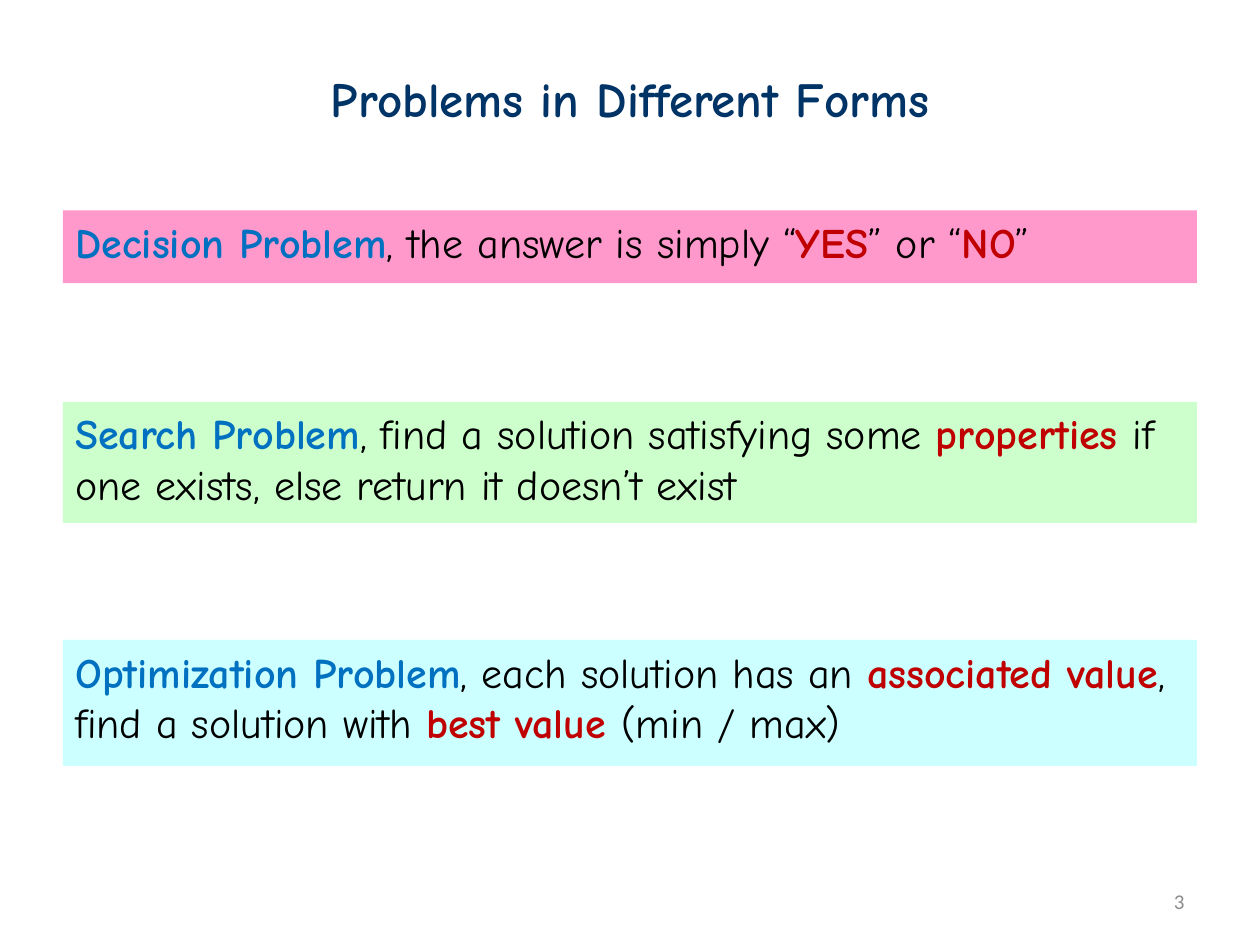
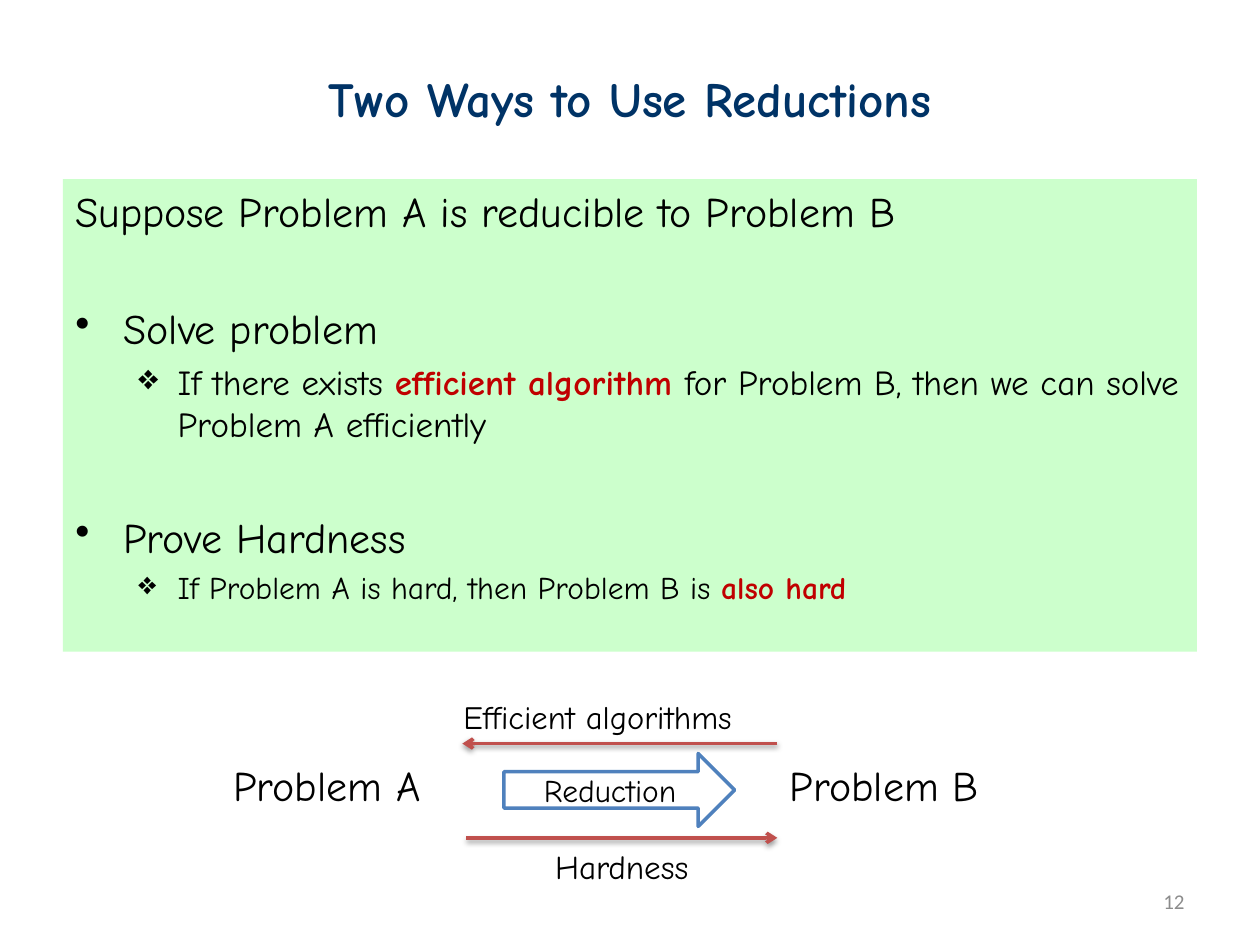
"""Build two lecture slides on problem forms and on uses of reductions."""
from lxml.etree import SubElement
from pptx import Presentation
from pptx.dml.color import RGBColor
from pptx.enum.shapes import MSO_CONNECTOR, MSO_SHAPE
from pptx.enum.text import MSO_ANCHOR, PP_ALIGN
from pptx.oxml import parse_xml
from pptx.oxml.ns import nsdecls, qn
from pptx.util import Cm, Pt

HUES = {
    "navy": "003366", "blue": "0070C0", "red": "C00000", "black": "000000",
    "gray": "8C8C8C", "pink": "FF99CC", "green": "CCFFCC", "cyan": "CCFFFF",
    "white": "FFFFFF", "edge": "4F81BD", "line": "C0504D",
}
LEFT, WIDE = 1.27, 22.86
FONT = "Comic Neue"
MID = {"anchor": MSO_ANCHOR.MIDDLE, "lead": 0}
MARKS = {"•": (0.97, 0.97), "❖": (2.06, 0.79)}
SHADE = (
    f'<a:effectLst {nsdecls("a")}><a:outerShdw blurRad="{Pt(3.1)}" dist="{Pt(1.6)}" '
    'dir="5400000" rotWithShape="0"><a:srgbClr val="000000"><a:alpha val="38000"/>'
    "</a:srgbClr></a:outerShdw></a:effectLst>"
)


def tint(name):
    return RGBColor.from_string(HUES[name])


def write(slide, spot, lines, fill=None, form=None, face=FONT,
          anchor=MSO_ANCHOR.TOP, align=PP_ALIGN.LEFT, lead=0.2):
    place = [Cm(n) for n in spot]
    if form is None:
        shape = slide.shapes.add_textbox(*place)
    else:
        shape = slide.shapes.add_shape(form, *place)
        shape.shadow.inherit = False
        shape.fill.solid()
        shape.fill.fore_color.rgb = tint(fill)
        shape.line.fill.background()
    frame = shape.text_frame
    frame.word_wrap = True
    frame.vertical_anchor = anchor
    for i, (size, mark, gap, parts) in enumerate(lines):
        para = frame.add_paragraph() if i else frame.paragraphs[0]
        look = {"alignment": align, "space_before": Pt(gap or size * lead)}
        for key, value in look.items():
            setattr(para, key, value)
        if mark:
            props = para._p.get_or_add_pPr()
            left, hang = MARKS[mark]
            props.set("marL", str(Cm(left)))
            props.set("indent", str(-Cm(hang)))
            SubElement(props, qn("a:buChar")).set("char", mark)
        for text, hue in parts:
            run = para.add_run()
            run.text = text
            look = {"name": face, "size": Pt(size), "bold": hue in ("navy", "blue", "red")}
            for key, value in look.items():
                setattr(run.font, key, value)
            run.font.color.rgb = tint(hue)
    return shape


deck = Presentation()
deck.slide_width, deck.slide_height = Cm(25.4), Cm(19.05)
slides = []
for title, page in (("Problems in Different Forms", "3"), ("Two Ways to Use Reductions", "12")):
    slide = deck.slides.add_slide(deck.slide_layouts[6])
    write(slide, (LEFT, 0.76, WIDE, 2.41), [(28, None, 0, [(title, "navy")])],
          align=PP_ALIGN.CENTER, **MID)
    write(slide, (18.21, 17.65, 5.92, 1.02), [(12, None, 0, [(page, "gray")])],
          face="Calibri", align=PP_ALIGN.RIGHT, **MID)
    slides.append(slide)
forms, ways = slides

bands = [
    (4.24, 1.47, "pink", [
        ("Decision Problem", "blue"), (", the answer is simply “", "black"),
        ("YES", "red"), ("” or “", "black"), ("NO", "red"), ("”", "black")]),
    (8.1, 2.44, "green", [
        ("Search Problem", "blue"), (", find a solution satisfying some ", "black"),
        ("properties ", "red"), ("if one exists, else return it doesn’t exist", "black")]),
    (12.9, 2.54, "cyan", [
        ("Optimization Problem", "blue"), (", each solution has an ", "black"),
        ("associated value", "red"), (", find a solution with ", "black"),
        ("best value ", "red"), ("(min / max)", "black")]),
]
for top, high, fill, parts in bands:
    write(forms, (LEFT, top, WIDE, high), [(24, None, 0, parts)], fill, MSO_SHAPE.RECTANGLE)

points = [
    (24, None, 0, [("Suppose Problem A is reducible to Problem B", "black")]),
    (24, "•", 38.4, [("Solve problem", "black")]),
    (20, "❖", 0, [
        ("If there exists ", "black"), ("efficient algorithm ", "red"),
        ("for Problem B, then we can solve Problem A efficiently", "black")]),
    (24, "•", 38.4, [("Prove Hardness", "black")]),
    (18, "❖", 0, [
        ("If Problem A is hard, then Problem B is ", "black"), ("also hard", "red")]),
]
write(ways, (LEFT, 3.61, WIDE, 9.53), points, "green", MSO_SHAPE.RECTANGLE)

labels = [
    ("Problem A", 24, (4.45, 15.19, 4.65, 1.27), PP_ALIGN.LEFT),
    ("Problem B", 24, (15.67, 15.19, 4.65, 1.27), PP_ALIGN.LEFT),
    ("Efficient algorithms", 18.6, (9.09, 13.92, 6.99, 1.07), PP_ALIGN.LEFT),
    ("Hardness", 19, (9.04, 16.94, 6.99, 1.07), PP_ALIGN.CENTER),
]
for text, size, spot, align in labels:
    write(ways, spot, [(size, None, 0, [(text, "black")])], align=align)

arrow = write(ways, (10.16, 15.19, 4.65, 1.47), [(18, None, 0, [("Reduction", "black")])],
              "white", MSO_SHAPE.RIGHT_ARROW, align=PP_ALIGN.CENTER, **MID)
arrow.line.color.rgb = tint("edge")
arrow.line.width = Pt(2)

for start, end, high in ((15.67, 9.32, 14.99), (9.4, 15.67, 16.89)):
    link = ways.shapes.add_connector(
        MSO_CONNECTOR.STRAIGHT, Cm(start), Cm(high), Cm(end), Cm(high))
    link.line.color.rgb = tint("line")
    link.line.width = Pt(2)
    SubElement(link.line._get_or_add_ln(), qn("a:tailEnd")).set("type", "arrow")
    link._element.spPr.append(parse_xml(SHADE))

deck.save("out.pptx")
